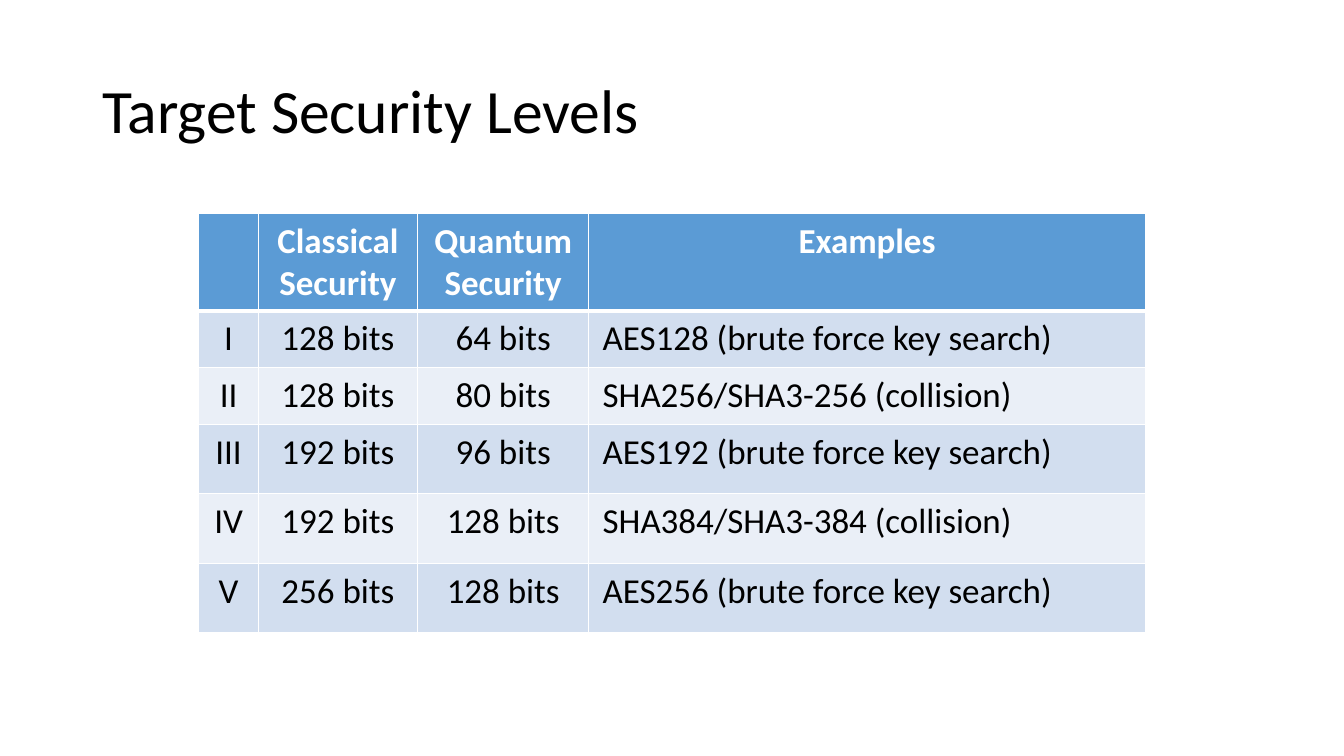
from lxml import etree
from pptx import Presentation
from pptx.dml.color import RGBColor
from pptx.enum.text import MSO_ANCHOR, PP_ALIGN
from pptx.oxml.ns import qn
from pptx.util import Cm, Pt

LEFT, CENTER = PP_ALIGN.LEFT, PP_ALIGN.CENTER
MIDDLE = MSO_ANCHOR.MIDDLE
FONT = "Calibri"
WHITE, BLACK = "FFFFFF", "000000"
HEADER_FILL = "5B9BD5"
BAND_FILLS = ("D2DEEF", "EAEFF7")
RULE, HEADER_RULE = 1, 3

LEVELS = [
    ("", "Classical Security", "Quantum Security", "Examples"),
    ("I", "128 bits", "64 bits", "AES128 (brute force key search)"),
    ("II", "128 bits", "80 bits", "SHA256/SHA3-256 (collision)"),
    ("III", "192 bits", "96 bits", "AES192 (brute force key search)"),
    ("IV", "192 bits", "128 bits", "SHA384/SHA3-384 (collision)"),
    ("V", "256 bits", "128 bits", "AES256 (brute force key search)"),
]
COLUMN_WIDTHS = (1.5, 4.01, 4.32, 14.02)
ROW_HEIGHTS = (2.46, 1.43, 1.43, 1.75, 1.75, 1.75)
EXAMPLES_COLUMN = 3


def color(hex_string):
    return RGBColor.from_string(hex_string)


def write(frame, text, size, ink=BLACK, bold=False, align=LEFT, spacing=1.0):
    paragraph = frame.paragraphs[0]
    paragraph.alignment = align
    paragraph.line_spacing = spacing
    paragraph.font.size = Pt(size)
    if text:
        run = paragraph.add_run()
        run.text = text
        run.font.name = FONT
        run.font.size = Pt(size)
        run.font.bold = bold
        run.font.color.rgb = color(ink)


def set_borders(cell, top, bottom):
    """Draw white rules round a cell; top and bottom are widths in points."""
    properties = cell._tc.get_or_add_tcPr()
    sides = (("lnL", RULE), ("lnR", RULE), ("lnT", top), ("lnB", bottom))
    for position, (side, width) in enumerate(sides):
        line = etree.Element(qn(f"a:{side}"), w=str(Pt(width)))
        fill = etree.SubElement(line, qn("a:solidFill"))
        etree.SubElement(fill, qn("a:srgbClr"), val=WHITE)
        properties.insert(position, line)


def add_title(slide, left, top, width, height):
    frame = slide.shapes.add_textbox(
        Cm(left), Cm(top), Cm(width), Cm(height)).text_frame
    frame.word_wrap = True
    frame.vertical_anchor = MIDDLE
    write(frame, "Target Security Levels", 44, spacing=0.9)


def add_levels_table(slide, left, top):
    table = slide.shapes.add_table(
        len(LEVELS), len(COLUMN_WIDTHS), Cm(left), Cm(top),
        Cm(sum(COLUMN_WIDTHS)), Cm(sum(ROW_HEIGHTS))).table
    for column, width in zip(table.columns, COLUMN_WIDTHS):
        column.width = Cm(width)
    for row, height in zip(table.rows, ROW_HEIGHTS):
        row.height = Cm(height)

    for row_index, level in enumerate(LEVELS):
        header = row_index == 0
        for column_index, text in enumerate(level):
            cell = table.cell(row_index, column_index)
            cell.margin_left = cell.margin_right = Cm(0.35)
            cell.margin_top = cell.margin_bottom = Cm(0.17)
            cell.fill.solid()
            cell.fill.fore_color.rgb = color(
                HEADER_FILL if header else BAND_FILLS[(row_index - 1) % 2])
            set_borders(cell,
                        top=HEADER_RULE if row_index == 1 else RULE,
                        bottom=HEADER_RULE if header else RULE)
            centered = header or column_index != EXAMPLES_COLUMN
            write(cell.text_frame, text, 25, bold=header,
                  ink=WHITE if header else BLACK,
                  align=CENTER if centered else LEFT)


def main():
    presentation = Presentation()
    presentation.slide_width = Cm(33.87)
    presentation.slide_height = Cm(19.05)
    slide = presentation.slides.add_slide(presentation.slide_layouts[6])
    add_title(slide, 2.33, 1.01, 29.21, 3.68)
    add_levels_table(slide, 5.01, 5.37)
    presentation.save("out.pptx")


if __name__ == "__main__":
    main()
